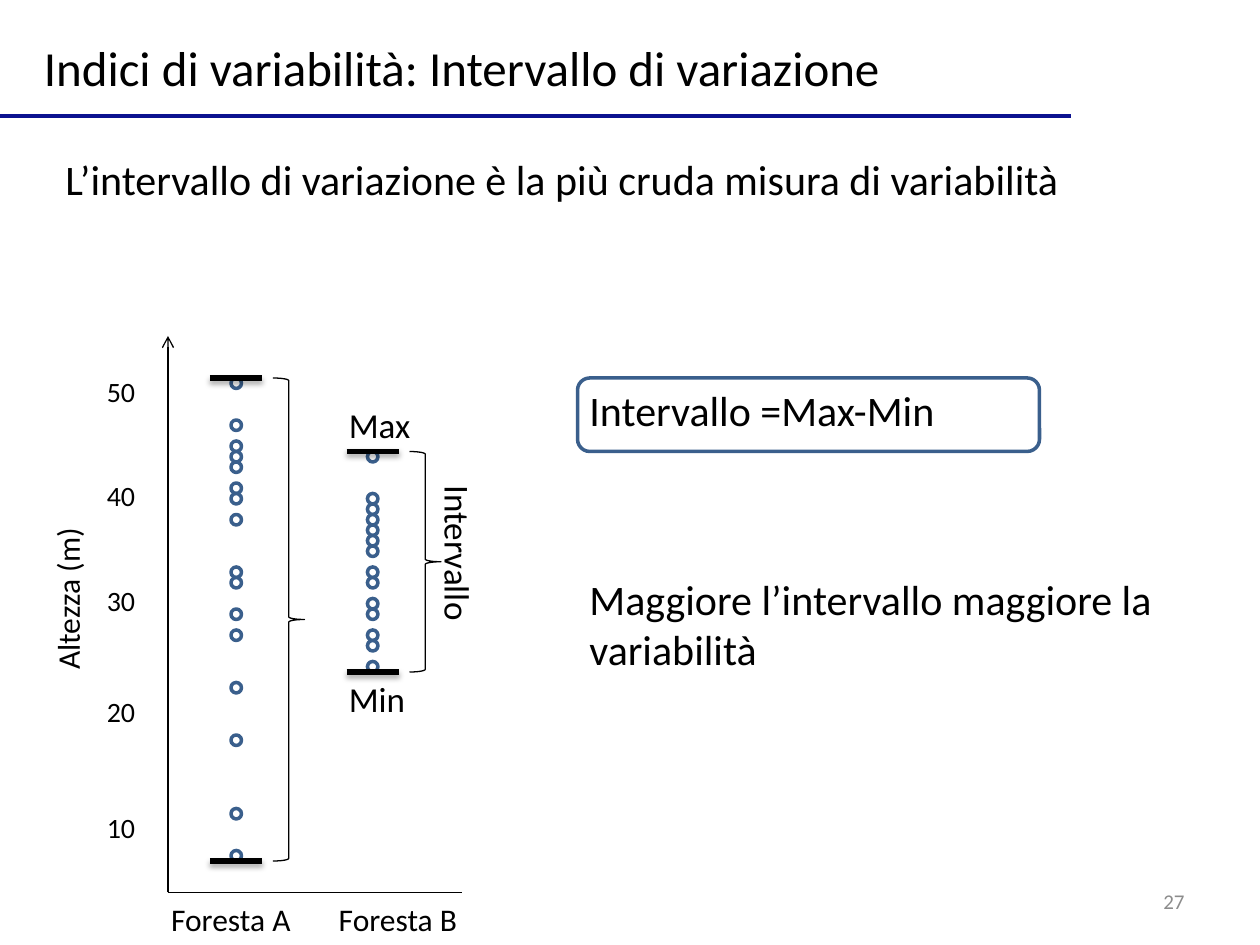
from dataclasses import dataclass

from lxml import etree
from pptx import Presentation
from pptx.dml.color import RGBColor
from pptx.enum.shapes import MSO_CONNECTOR, MSO_SHAPE
from pptx.enum.text import MSO_ANCHOR, MSO_AUTO_SIZE, PP_ALIGN
from pptx.oxml.ns import qn
from pptx.util import Inches, Pt

LINE = MSO_CONNECTOR.STRAIGHT
DOT, BRACE, ROUND = MSO_SHAPE.OVAL, MSO_SHAPE.RIGHT_BRACE, MSO_SHAPE.ROUNDED_RECTANGLE
TOP, MID = MSO_ANCHOR.TOP, MSO_ANCHOR.MIDDLE
LEFT, RIGHT = PP_ALIGN.LEFT, PP_ALIGN.RIGHT
GROW, FIXED = MSO_AUTO_SIZE.SHAPE_TO_FIT_TEXT, MSO_AUTO_SIZE.NONE


@dataclass(frozen=True)
class Theme:
    font: str = "Calibri"
    ink: str = "000000"
    gray: str = "8C8C8C"
    navy: str = "0C1290"
    blue: str = "3A5F8C"
    white: str = "FFFFFF"
    title: int = 28
    body: int = 24
    mark: int = 20
    label: int = 18
    tick: int = 16
    page: int = 12
    thin: float = 0.75
    edge: float = 2
    bold: float = 3


@dataclass(frozen=True)
class Forest:
    name: str
    name_x: float
    dot_col: int
    high: int
    low: int
    dots: tuple[int, ...]


THEME = Theme()
GRID = 1 / 12
AXIS_X, AXIS_Y = 16 * GRID, 85 * GRID

FORESTS = (
    Forest("Foresta A", 1.26, 22, 36, 82,
           (36, 40, 42, 43, 44, 46, 47, 49, 54, 55, 58, 60, 65, 70, 77, 81)),
    Forest("Foresta B", 2.59, 35, 43, 64,
           (43, 47, 48, 49, 50, 51, 52, 54, 55, 57, 58, 60, 61, 63)),
)
TICKS = {"50": 2.92, "40": 3.75, "30": 4.58, "20": 5.46, "10": 6.38}


def add_text(slide, text: str, x: float, y: float, w: float, h: float, *,
             size: int, color: str = THEME.ink, align=LEFT, anchor=TOP,
             wrap: bool = True, fit=GROW, turn: float = 0) -> None:
    box = slide.shapes.add_textbox(Inches(x), Inches(y), Inches(w), Inches(h))
    box.rotation = turn
    frame = box.text_frame
    frame.word_wrap = wrap
    frame.auto_size = fit
    frame.vertical_anchor = anchor
    para = frame.paragraphs[0]
    para.alignment = align
    run = para.add_run()
    run.text = text
    run.font.name = THEME.font
    run.font.size = Pt(size)
    run.font.color.rgb = RGBColor.from_string(color)


def add_form(slide, kind, x: float, y: float, w: float, h: float, *,
             color: str, width: float, fill: str | None = None) -> None:
    form = slide.shapes.add_shape(kind, Inches(x), Inches(y), Inches(w), Inches(h))
    form.shadow.inherit = False
    if fill:
        form.fill.solid()
        form.fill.fore_color.rgb = RGBColor.from_string(fill)
    else:
        form.fill.background()
    form.line.color.rgb = RGBColor.from_string(color)
    form.line.width = Pt(width)


def add_line(slide, x1: float, y1: float, x2: float, y2: float, *,
             color: str = THEME.ink, width: float = THEME.thin,
             arrow: bool = False, shadow: bool = False) -> None:
    line = slide.shapes.add_connector(LINE, Inches(x1), Inches(y1), Inches(x2), Inches(y2))
    line.line.color.rgb = RGBColor.from_string(color)
    line.line.width = Pt(width)
    props = line._element.spPr
    if arrow:
        etree.SubElement(props.find(qn("a:ln")), qn("a:tailEnd"), type="arrow")
    effects = etree.SubElement(props, qn("a:effectLst"))
    if shadow:
        outer = etree.SubElement(effects, qn("a:outerShdw"), blurRad=str(Pt(3.1)),
                                 dist=str(Pt(1.8)), dir="5400000", rotWithShape="0")
        tone = etree.SubElement(outer, qn("a:srgbClr"), val=THEME.ink)
        etree.SubElement(tone, qn("a:alpha"), val="35000")


def add_forest(slide, forest: Forest) -> None:
    col = forest.dot_col
    for row in forest.dots:
        add_form(slide, DOT, col * GRID, row * GRID, GRID, GRID,
                 color=THEME.blue, width=THEME.edge, fill=THEME.white)
    add_form(slide, BRACE, (col + 4) * GRID, forest.high * GRID,
             3 * GRID, (forest.low - forest.high) * GRID,
             color=THEME.ink, width=THEME.thin)
    for row in (forest.high, forest.low):
        add_line(slide, (col - 2) * GRID, row * GRID, (col + 3) * GRID, row * GRID,
                 width=THEME.bold, shadow=True)
    add_text(slide, forest.name, forest.name_x, 7.09, 1.16, 0.4,
             size=THEME.label, wrap=False)


def add_plot(slide) -> None:
    add_line(slide, AXIS_X, AXIS_Y, AXIS_X, 32 * GRID, arrow=True)
    add_line(slide, AXIS_X, AXIS_Y, 44 * GRID, AXIS_Y)
    add_text(slide, "Altezza (m)", -0.38, 4.3, 1.83, 0.4,
             size=THEME.label, anchor=MID, turn=270)
    for text, y in TICKS.items():
        add_text(slide, text, 0.75, y, 0.67, 0.37, size=THEME.tick, anchor=MID)
    for forest in FORESTS:
        add_forest(slide, forest)
    for text, y in (("Max", 3.15), ("Min", 5.33)):
        add_text(slide, text, 2.67, y, 0.83, 0.44, size=THEME.mark)
    add_text(slide, "Intervallo", 2.97, 4.2, 1.33, 0.44, size=THEME.mark, turn=90)


def main() -> None:
    deck = Presentation()
    deck.slide_width, deck.slide_height = Inches(10), Inches(7.5)
    slide = deck.slides.add_slide(deck.slide_layouts[6])
    add_text(slide, "27", 7.17, 6.95, 2.33, 0.4, size=THEME.page,
             color=THEME.gray, align=RIGHT, anchor=MID, fit=FIXED)
    add_text(slide, "Indici di variabilità: Intervallo di variazione",
             0.25, 0.25, 6.89, 0.57, size=THEME.title, anchor=MID, wrap=False)
    add_line(slide, 0, 0.92, 8.5, 0.92, color=THEME.navy, width=THEME.edge)
    add_text(slide, "L’intervallo di variazione è la più cruda misura di variabilità",
             0.42, 1.17, 9.25, 0.5, size=THEME.body)
    add_plot(slide)
    add_form(slide, ROUND, 55 * GRID, 3, 44 * GRID, 7 * GRID,
             color=THEME.blue, width=THEME.edge)
    add_text(slide, "Intervallo =Max-Min", 4.58, 3, 5, 0.5, size=THEME.body)
    add_text(slide, "Maggiore l’intervallo maggiore la variabilità",
             4.58, 4.5, 5, 0.91, size=THEME.body)
    deck.save("out.pptx")


if __name__ == "__main__":
    main()
